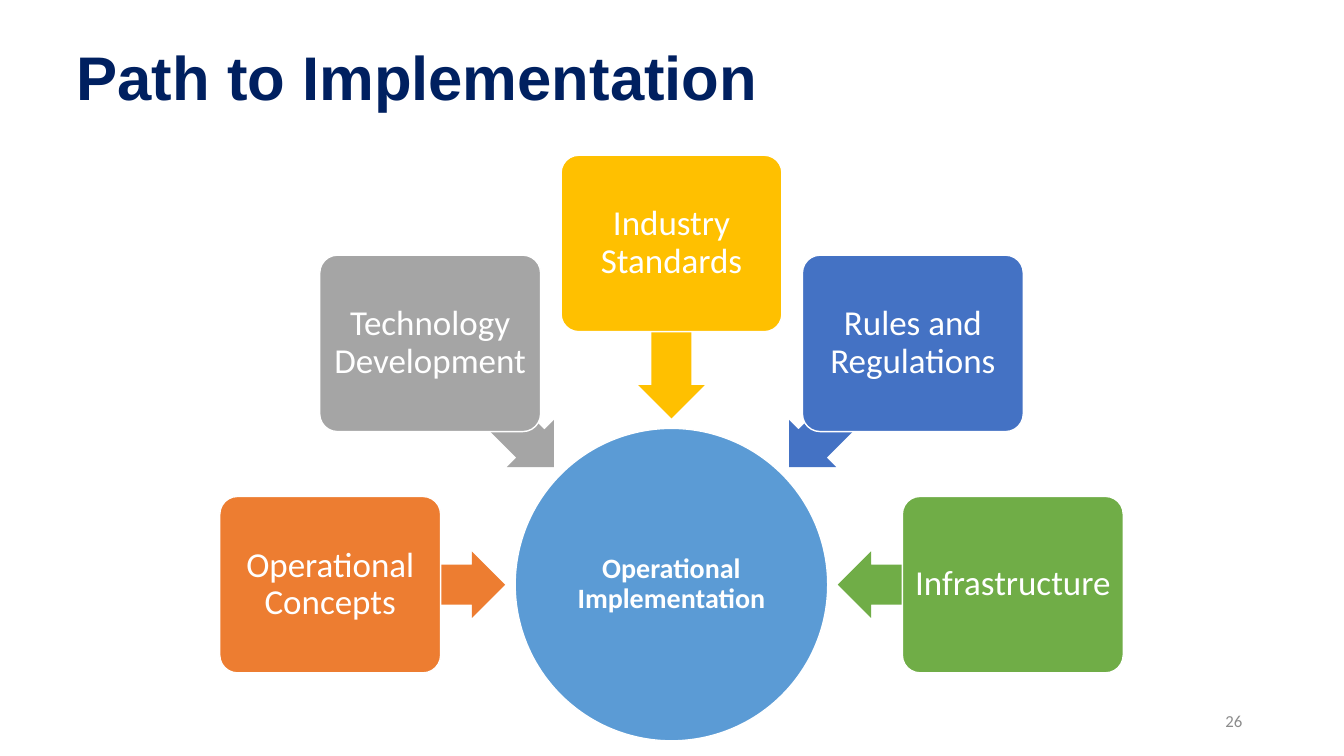
"""Build the Path to Implementation slide: five inputs converging on one goal."""
import math

from pptx import Presentation
from pptx.dml.color import RGBColor
from pptx.enum import shapes, text
from pptx.util import Inches, Pt

TITLE = "Path to Implementation"
GOAL = ("Operational Implementation", "5B9BD5")
INPUTS = [
    ("Operational Concepts", "ED7D31"),
    ("Technology Development", "A5A5A5"),
    ("Industry Standards", "FFC000"),
    ("Rules and Regulations", "4472C4"),
    ("Infrastructure", "70AD47"),
]
PAGE = "26"

CENTER = (6.66, 5.8)
GOAL_SIZE = (3.1, 3.1)
BOX_SIZE, BOX_RADIUS = (2.19, 1.75), 3.385
ARROW_SIZE, ARROW_RADIUS = (1.73, 0.66), 2.515
FIRST_ANGLE, ANGLE_STEP = 180, 45


def color(value):
    return RGBColor.from_string(value)


def write(frame, words, size, font, ink, align, bold=False, spacing=0.9, inset=None):
    frame.word_wrap = True
    frame.auto_size = text.MSO_AUTO_SIZE.NONE
    frame.vertical_anchor = text.MSO_ANCHOR.MIDDLE
    if inset is not None:
        frame.margin_left = frame.margin_right = Inches(inset)
        frame.margin_top = frame.margin_bottom = Inches(inset)
    paragraph = frame.paragraphs[0]
    paragraph.alignment = align
    paragraph.line_spacing = spacing
    run = paragraph.add_run()
    run.text = words
    run.font.size = Pt(size)
    run.font.name = font
    run.font.bold = bold
    run.font.color.rgb = color(ink)


def add_part(slide, kind, size, fill, radius=0, angle=0, outlined=True):
    width, height = size
    turn = math.radians(angle)
    left = CENTER[0] + radius * math.cos(turn) - width / 2
    top = CENTER[1] + radius * math.sin(turn) - height / 2
    part = slide.shapes.add_shape(
        kind, Inches(left), Inches(top), Inches(width), Inches(height))
    part.shadow.inherit = False
    part.fill.solid()
    part.fill.fore_color.rgb = color(fill)
    if outlined:
        part.line.color.rgb = color("FFFFFF")
        part.line.width = Pt(1)
    else:
        part.line.fill.background()
    return part


def main():
    deck = Presentation()
    deck.slide_width, deck.slide_height = Inches(13.33), Inches(7.5)
    slide = deck.slides.add_slide(deck.slide_layouts[5])

    title = slide.shapes.title
    title.left, title.top = Inches(0.66), Inches(0.25)
    title.width, title.height = Inches(12), Inches(1.09)
    write(title.text_frame, TITLE, 44, "Arial", "002060", text.PP_ALIGN.LEFT, bold=True)

    words, fill = GOAL
    goal = add_part(slide, shapes.MSO_SHAPE.OVAL, GOAL_SIZE, fill)
    write(goal.text_frame, words, 20, "Calibri", "FFFFFF", text.PP_ALIGN.CENTER,
          bold=True, inset=0.01)

    for index, (words, fill) in enumerate(INPUTS):
        angle = FIRST_ANGLE + index * ANGLE_STEP
        arrow = add_part(slide, shapes.MSO_SHAPE.LEFT_ARROW, ARROW_SIZE, fill,
                         ARROW_RADIUS, angle, outlined=False)
        arrow.adjustments[0] = 0.6
        arrow.rotation = angle % 360
        box = add_part(slide, shapes.MSO_SHAPE.ROUNDED_RECTANGLE, BOX_SIZE, fill,
                       BOX_RADIUS, angle)
        box.adjustments[0] = 0.1
        write(box.text_frame, words, 25, "Calibri", "FFFFFF", text.PP_ALIGN.CENTER,
              inset=0.05)

    page = slide.shapes.add_textbox(Inches(9.42), Inches(6.95), Inches(3), Inches(0.4))
    write(page.text_frame, PAGE, 12, "Calibri", "8C8C8C", text.PP_ALIGN.RIGHT, spacing=1.0)

    deck.save("out.pptx")


if __name__ == "__main__":
    main()
